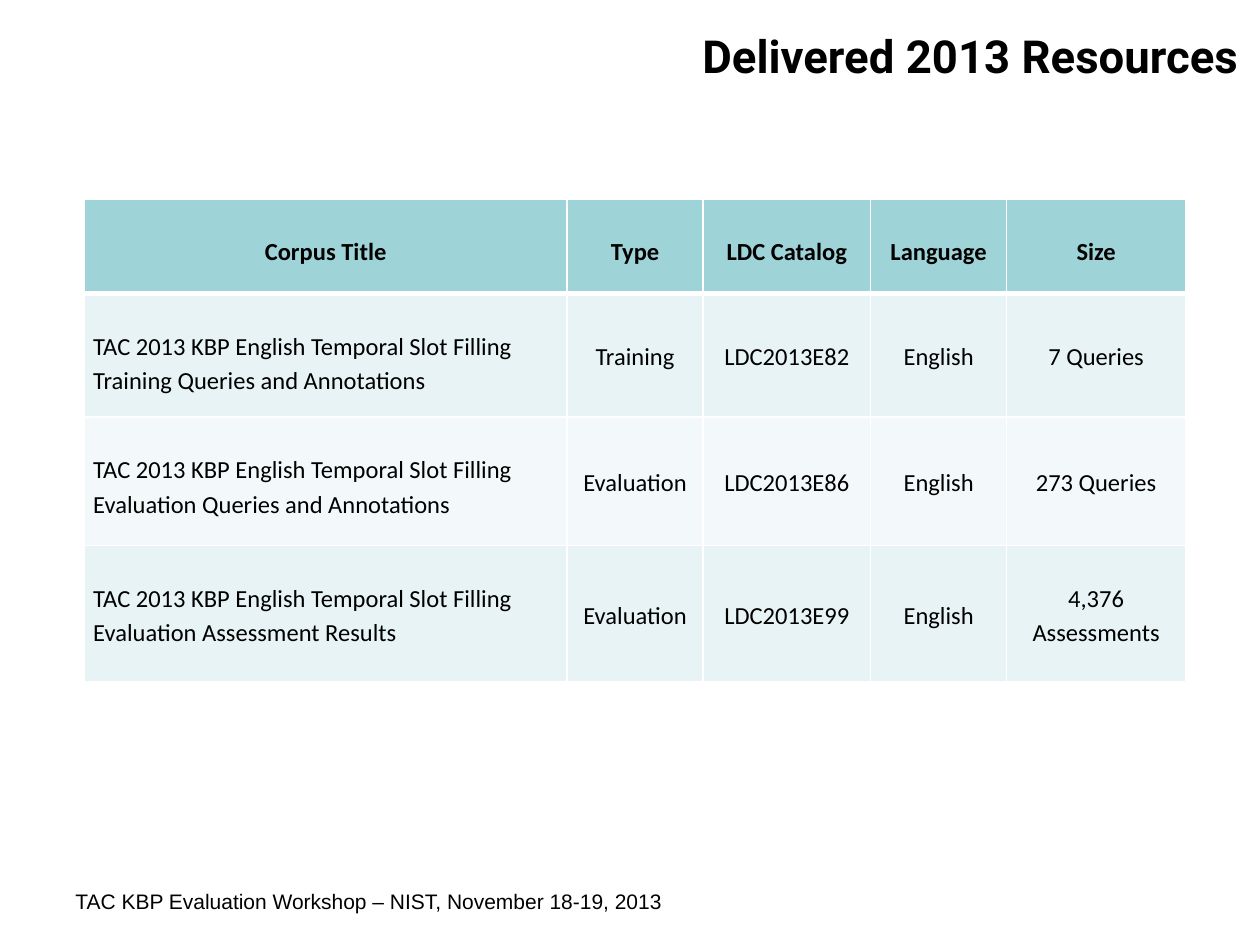
import pptx
import pptx.util
import pptx.dml.color
import pptx.enum.text
import pptx.oxml
import pptx.oxml.ns

Inches = pptx.util.Inches
ALIGN = pptx.enum.text.PP_ALIGN
ANCHOR = pptx.enum.text.MSO_ANCHOR

TITLE = "Delivered 2013 Resources"
FOOTER = "TAC KBP Evaluation Workshop – NIST, November 18-19, 2013"
HEADINGS = ["Corpus Title", "Type", "LDC Catalog", "Language", "Size"]
CORPORA = [
    ["TAC 2013 KBP English Temporal Slot Filling Training Queries and Annotations",
     "Training", "LDC2013E82", "English", "7 Queries"],
    ["TAC 2013 KBP English Temporal Slot Filling Evaluation Queries and Annotations",
     "Evaluation", "LDC2013E86", "English", "273 Queries"],
    ["TAC 2013 KBP English Temporal Slot Filling Evaluation Assessment Results",
     "Evaluation", "LDC2013E99", "English", "4,376 Assessments"],
]
COLUMN_WIDTHS = [3.83, 1.08, 1.33, 1.08, 1.42]
ROW_HEIGHTS = [0.75, 0.98, 1.02, 1.08]
THEME = {
    "text": "000000",
    "border": "FFFFFF",
    "heading_fill": "9ED3D7",
    "band_fills": ["E7F3F4", "F3F9FA"],
    "title": {"name": "Roboto", "size": 26, "bold": True},
    "footer": {"name": "Arial", "size": 12, "bold": False},
    "heading": {"name": "Calibri", "size": 14, "bold": True},
    "body": {"name": "Calibri", "size": 14, "bold": False},
}


def set_all(target, values):
    for name, value in values.items():
        setattr(target, name, value)


def write(frame, text, style, align, spacing=1.0):
    para = frame.paragraphs[0]
    set_all(para, {"alignment": align, "line_spacing": spacing})
    span = para.add_run()
    span.text = text
    set_all(span.font, {**THEME[style], "size": pptx.util.Pt(THEME[style]["size"])})
    span.font.color.rgb = pptx.dml.color.RGBColor.from_string(THEME["text"])


def add_text(page, place, text, style, align, inset_x, inset_y):
    frame = page.shapes.add_textbox(*map(Inches, place)).text_frame
    set_all(frame, {
        "word_wrap": True, "vertical_anchor": ANCHOR.TOP,
        "margin_left": Inches(inset_x), "margin_right": Inches(inset_x),
        "margin_top": Inches(inset_y), "margin_bottom": Inches(inset_y),
    })
    write(frame, text, style, align)


def set_borders(cell, widths):
    properties = cell._tc.get_or_add_tcPr()
    for index, (side, width) in enumerate(widths.items()):
        properties.insert(index, pptx.oxml.parse_xml(
            f'<a:ln{side} {pptx.oxml.ns.nsdecls("a")} w="{pptx.util.Pt(width)}">'
            f'<a:solidFill><a:srgbClr val="{THEME["border"]}"/></a:solidFill></a:ln{side}>'))


def fill_cell(cell, text, row, column):
    heading = row == 0
    offset = heading or column == 0
    set_all(cell, {
        "margin_left": Inches(0.07), "margin_right": Inches(0.07),
        "margin_top": Inches(0.27 if offset else 0), "margin_bottom": 0,
        "vertical_anchor": ANCHOR.TOP if offset else ANCHOR.MIDDLE,
    })
    color = THEME["heading_fill"] if heading else THEME["band_fills"][(row - 1) % 2]
    cell.fill.solid()
    cell.fill.fore_color.rgb = pptx.dml.color.RGBColor.from_string(color)
    set_borders(cell, {"L": 1, "R": 1, "T": 3 if row == 1 else 1, "B": 3 if heading else 1})
    align = ALIGN.LEFT if column == 0 and not heading else ALIGN.CENTER
    write(cell.text_frame, text, "heading" if heading else "body", align, 1.15)


def add_corpus_table(page):
    rows = [HEADINGS] + CORPORA
    size = (sum(COLUMN_WIDTHS), sum(ROW_HEIGHTS))
    table = page.shapes.add_table(
        len(rows), len(HEADINGS), *map(Inches, (0.67, 1.58, *size))).table
    set_all(table, {"first_row": False, "horz_banding": False})
    for column, width in zip(table.columns, COLUMN_WIDTHS):
        column.width = Inches(width)
    for row, height in zip(table.rows, ROW_HEIGHTS):
        row.height = Inches(height)
    for row, texts in enumerate(rows):
        for column, text in enumerate(texts):
            fill_cell(table.cell(row, column), text, row, column)


def main():
    """Build the slide that lists the delivered corpora."""
    deck = pptx.Presentation()
    set_all(deck, {"slide_width": Inches(10), "slide_height": Inches(7.5)})
    page = deck.slides.add_slide(deck.slide_layouts[6])
    add_text(page, (2.83, 0.22, 7, 0.87), TITLE, "title", ALIGN.RIGHT, 0, 0)
    add_text(page, (0.5, 7, 6.67, 0.35), FOOTER, "footer", ALIGN.LEFT, 0.1, 0.05)
    add_corpus_table(page)
    deck.save("out.pptx")


if __name__ == "__main__":
    main()
